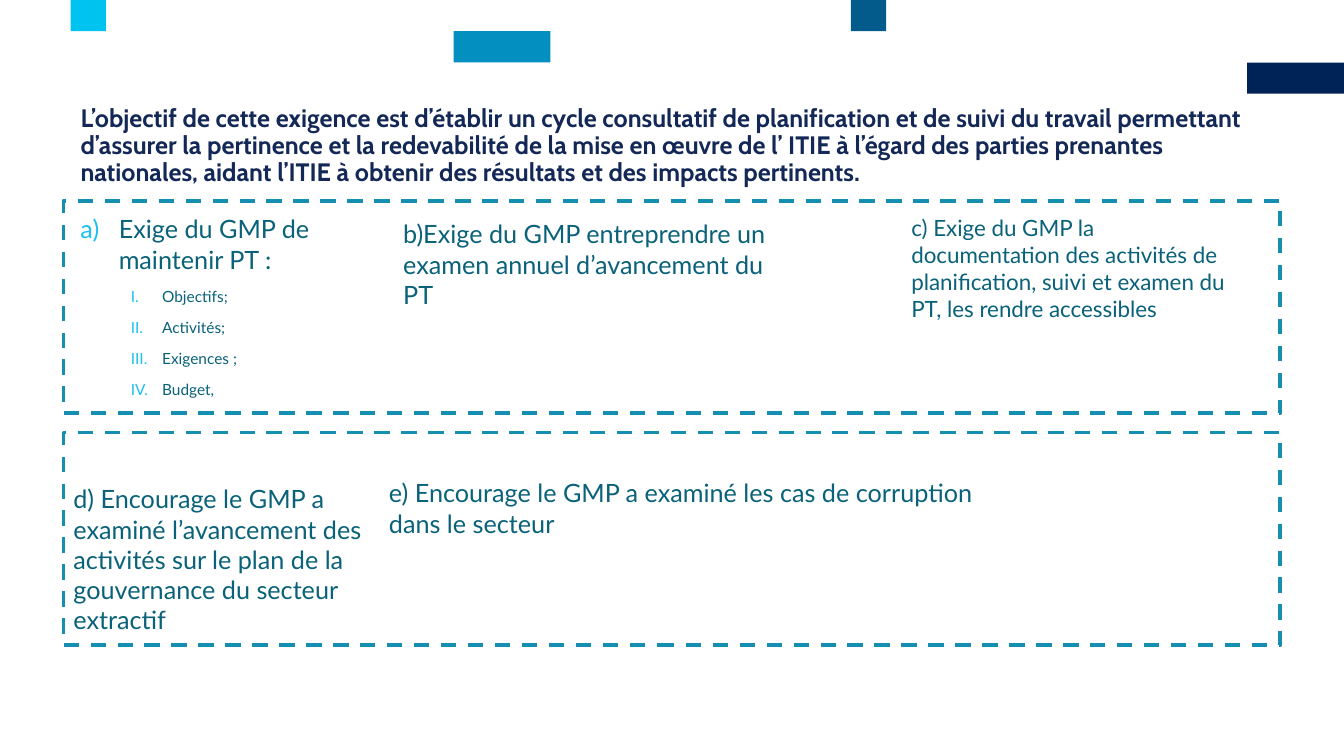
"""Builds the slide on the planning and monitoring requirement."""
from lxml import etree
from pptx import Presentation
from pptx.dml.color import RGBColor
from pptx.enum.dml import MSO_LINE
from pptx.enum.shapes import MSO_SHAPE
from pptx.enum.text import MSO_ANCHOR
from pptx.oxml.ns import qn
from pptx.util import Inches, Pt

RECTANGLE = MSO_SHAPE.RECTANGLE
DASH = MSO_LINE.DASH
TOP = MSO_ANCHOR.TOP
NAVY = RGBColor(0x00, 0x23, 0x57)
BLUE = RGBColor(0x02, 0x5B, 0x8B)
CERULEAN = RGBColor(0x03, 0x8F, 0xBF)
CYAN = RGBColor(0x00, 0xC3, 0xF0)
TITLE_INK = RGBColor(0x13, 0x28, 0x56)
TEAL = RGBColor(0x09, 0x62, 0x79)
FRAME_BLUE = RGBColor(0x15, 0x8E, 0xB0)
NUMBER_BLUE = RGBColor(0x1C, 0xC0, 0xEE)

ACCENTS = [
    (12.37, 2, 0.97, NAVY),
    (8.44, 0, 0.35, BLUE),
    (4.5, 1, 0.96, CERULEAN),
    (0.7, 0, 0.35, CYAN),
]
ACCENT_HEIGHT = 0.31

FRAME_LEFT, FRAME_WIDTH, FRAME_HEIGHT = 0.63, 12.07, 2.11
FRAME_TOP, FRAME_PITCH, FRAME_COUNT = 1.99, 2.3, 2

TITLE = {"name": "Cabin", "size": Pt(18), "bold": True}
ITEM = {"name": "Lato", "size": Pt(18)}
SMALL_ITEM = {"name": "Lato", "size": Pt(16)}
SUB_ITEM = {"name": "Lato", "size": Pt(11)}

TITLE_SPACING = {"line_spacing": 0.89, "space_before": Pt(12), "space_after": Pt(12)}
ITEM_SPACING = {"space_before": Pt(9)}
SUB_SPACING = {"space_before": Pt(9), "level": 1}

LETTER = ("alphaLcParenR", 0.38, 0.38)
ROMAN = ("romanUcPeriod", 0.81, 0.31)

COMPONENTS = ["Objectifs;", "Activités;", "Exigences ;", "Budget,"]
TEXTS = [
    ((0.7, 1, 11.81, 0.73), [
        ("L’objectif de cette exigence est d’établir un cycle consultatif de "
         "planification et de suivi du travail permettant d’assurer la pertinence "
         "et la redevabilité de la mise en œuvre de l’ ITIE à l’égard des parties "
         "prenantes nationales, aidant l’ITIE à obtenir des résultats et des "
         "impacts pertinents.", TITLE, TITLE_INK, TITLE_SPACING, None)]),
    ((0.7, 2.07, 3.2, 1.95), [
        ("Exige du GMP de maintenir PT :", ITEM, TEAL, ITEM_SPACING, LETTER),
        *[(component, SUB_ITEM, TEAL, SUB_SPACING, ROMAN)
          for component in COMPONENTS]]),
    ((3.9, 2.12, 3.98, 1.1), [
        ("b)Exige du GMP entreprendre un examen annuel d’avancement du PT",
         ITEM, TEAL, {}, None)]),
    ((8.94, 2.08, 3.31, 1.18), [
        ("c) Exige du GMP la documentation des activités de planification, suivi "
         "et examen du PT, les rendre accessibles", SMALL_ITEM, TEAL, {}, None)]),
    ((0.63, 4.75, 3.2, 1.62), [
        ("d) Encourage le GMP a examiné l’avancement des activités sur le plan de "
         "la gouvernance du secteur extractif", ITEM, TEAL, ITEM_SPACING, None)]),
    ((3.76, 4.69, 6, 0.71), [
        ("e) Encourage le GMP a examiné les cas de corruption dans le secteur",
         ITEM, TEAL, ITEM_SPACING, None)]),
]


def set_values(target, values):
    for attribute, value in values.items():
        setattr(target, attribute, value)


def add_rectangle(slide, left, top, width, height):
    rectangle = slide.shapes.add_shape(
        RECTANGLE, *map(Inches, (left, top, width, height)))
    rectangle.shadow.inherit = False
    return rectangle


def add_accent(slide, left, row, width, color):
    accent = add_rectangle(slide, left, row * ACCENT_HEIGHT, width, ACCENT_HEIGHT)
    accent.fill.solid()
    accent.fill.fore_color.rgb = color
    accent.line.fill.background()


def add_frame(slide, top):
    frame = add_rectangle(slide, FRAME_LEFT, top, FRAME_WIDTH, FRAME_HEIGHT)
    frame.fill.background()
    frame.line.color.rgb = FRAME_BLUE
    set_values(frame.line, {"width": Pt(2.75), "dash_style": DASH})


def add_numbering(paragraph, scheme, margin, hanging):
    properties = paragraph._p.get_or_add_pPr()
    properties.set("marL", str(Inches(margin)))
    properties.set("indent", str(-Inches(hanging)))
    color = etree.SubElement(properties, qn("a:buClr"))
    etree.SubElement(color, qn("a:srgbClr"), val=str(NUMBER_BLUE))
    etree.SubElement(properties, qn("a:buFont"), typeface="+mj-lt")
    etree.SubElement(properties, qn("a:buAutoNum"), type=scheme)


def add_text(slide, place, paragraphs):
    frame = slide.shapes.add_textbox(*map(Inches, place)).text_frame
    set_values(frame, {"word_wrap": True, "vertical_anchor": TOP})
    for index, (words, font, color, spacing, numbering) in enumerate(paragraphs):
        paragraph = frame.add_paragraph() if index else frame.paragraphs[0]
        set_values(paragraph, spacing)
        if numbering:
            add_numbering(paragraph, *numbering)
        run = paragraph.add_run()
        run.text = words
        set_values(run.font, font)
        run.font.color.rgb = color


def main():
    deck = Presentation()
    set_values(deck, {"slide_width": Inches(13.33), "slide_height": Inches(7.5)})
    slide = deck.slides.add_slide(deck.slide_layouts[6])
    for accent in ACCENTS:
        add_accent(slide, *accent)
    for row in range(FRAME_COUNT):
        add_frame(slide, FRAME_TOP + row * FRAME_PITCH)
    for place, paragraphs in TEXTS:
        add_text(slide, place, paragraphs)
    deck.save("out.pptx")


if __name__ == "__main__":
    main()
